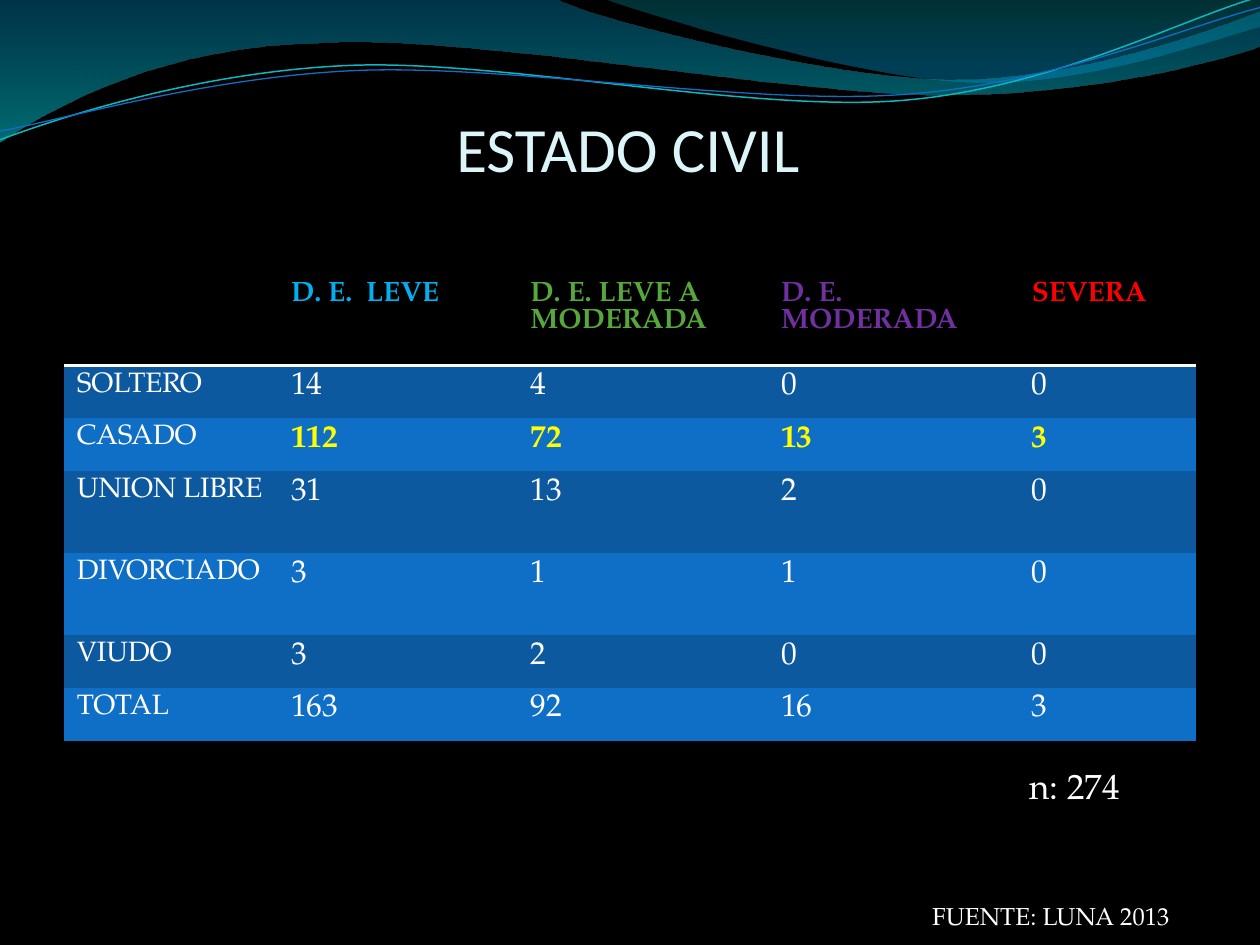
import pptx
import pptx.util
import pptx.dml.color
import pptx.enum.text
import pptx.oxml
import pptx.oxml.ns

WIDE, HIGH = 10, 7.5
UNIT = 1000
FACE = "TeX Gyre Pagella"
HUES = {
    "black": "000000", "white": "FFFFFF", "pale": "DBF5F9",
    "dark": "0C599F", "blue": "0F6FC6", "teal": "0AB8BF",
    "sky": "00B0F0", "green": "55A839", "plum": "7030A0",
    "red": "FF0000", "gold": "FFFF00",
    "sea": "0074A1", "aqua": "00C6CF", "lake": "00A1A9", "deep": "008BBF",
}
COLS = [1.7, 1.9, 1.99, 1.99, 1.4]
ROWS = [0.72, 0.42, 0.42, 0.65, 0.65, 0.42, 0.42]
HEADS = [("", "white"), ("D. E.  LEVE", "sky"), ("D. E. LEVE A MODERADA", "green"),
         ("D. E. MODERADA", "plum"), ("SEVERA", "red")]
DATA = [
    ("SOLTERO", 14, 4, 0, 0),
    ("CASADO", 112, 72, 13, 3),
    ("UNION LIBRE", 31, 13, 2, 0),
    ("DIVORCIADO", 3, 1, 1, 0),
    ("VIUDO", 3, 2, 0, 0),
    ("TOTAL", 163, 92, 16, 3),
]
BANDS = [
    ([(0, 0), (4.4, -0.01), (4.76, 0.17, 6.64, 0.63, 7.58, 0.63),
      (8.53, 0.63, 9.58, 0.26, 10, 0.09), (10.01, 0.36),
      (9.83, 0.44, 8.7, 0.76, 7.46, 0.75), (6.22, 0.75, 3.82, 0.28, 2.57, 0.34),
      (1.29, 0.36, 0.46, 0.83, -0.01, 1.13)],
     [(0, "sea", 45), (1, "aqua", 55)]),
    ([(4.79, -0.01), (5.09, 0.11, 6.82, 0.62, 7.69, 0.65),
      (8.56, 0.69, 9.61, 0.32, 10, 0.21), (10, 0)],
     [(0, "lake", 30), (0.8, "deep", 45)]),
]
WAVES = [
    ([(0, 1.11), (0.48, 0.93, 1.58, 0.57, 2.77, 0.52),
      (3.95, 0.47, 5.93, 0.89, 7.13, 0.8), (8.33, 0.71, 9.38, 0.15, 9.98, -0.02)],
     "teal", 0.85),
    ([(0, 1.04), (0.47, 0.96, 1.64, 0.61, 2.83, 0.56),
      (4.03, 0.51, 5.97, 0.84, 7.17, 0.75), (8.36, 0.67, 9.41, 0.21, 10, 0.06)],
     "blue", 0.75),
]


def inch(size):
    return pptx.util.Inches(size)


def tint(name):
    return pptx.dml.color.RGBColor.from_string(HUES[name])


def node(tag, **attrs):
    item = pptx.oxml.parse_xml(f"<{tag} {pptx.oxml.ns.nsdecls('a')}/>")
    for key, val in attrs.items():
        item.set(key, str(val))
    return item


def style(para, size, hue, face=FACE, bold=False):
    font = para.font
    font.size, font.name, font.bold = pptx.util.Pt(size), face, bold
    font.color.rgb = tint(hue)


def curve(slide, path, close):
    ends = [tuple(round(v * UNIT) for v in part[-2:]) for part in path]
    pen = slide.shapes.build_freeform(*ends[0], scale=inch(1) / UNIT)
    pen.add_line_segments(ends[1:], close=close)
    shape = pen.convert_to_shape()
    shape.shadow.inherit = False
    left, top = (min(axis) for axis in zip(*ends))
    legs = list(shape._element.iter(pptx.oxml.ns.qn("a:lnTo")))
    for leg, part in zip(legs, path[1:]):
        if len(part) == 6:
            bend = node("a:cubicBezTo")
            for x, y in zip(part[::2], part[1::2]):
                bend.append(node("a:pt", x=round(x * UNIT) - left,
                                 y=round(y * UNIT) - top))
            leg.getparent().replace(leg, bend)
    return shape


def add_band(slide, path, stops):
    shape = curve(slide, path, True)
    shape.line.fill.background()
    shape.fill.gradient()
    shape.fill.gradient_angle = 270
    for stop, (place, hue, alpha) in zip(shape.fill.gradient_stops, stops):
        stop.position = place
        stop.color.rgb = tint(hue)
    colors = shape._element.spPr.iter(pptx.oxml.ns.qn("a:srgbClr"))
    for color, (place, hue, alpha) in zip(colors, stops):
        color.append(node("a:alpha", val=alpha * 1000))


def add_wave(slide, path, hue, width):
    shape = curve(slide, path, False)
    shape.fill.background()
    shape.line.color.rgb = tint(hue)
    shape.line.width = pptx.util.Pt(width)


def set_title(slide, text):
    title = slide.shapes.title
    slide.shapes._spTree.append(title._element)
    title.left, title.top = inch(0.05 * WIDE), inch(0.77)
    title.width, title.height = inch(9.08), inch(0.7)
    frame = title.text_frame
    frame.text = text
    frame.margin_left = frame.margin_right = frame.margin_bottom = 0
    frame.vertical_anchor = pptx.enum.text.MSO_ANCHOR.BOTTOM
    para = frame.paragraphs[0]
    para.alignment = pptx.enum.text.PP_ALIGN.CENTER
    style(para, 36, "pale", "Calibri")


def set_cell(cell, text, fill, size, hue, bold):
    cell.fill.solid()
    cell.fill.fore_color.rgb = tint(fill)
    cell.text = str(text)
    style(cell.text_frame.paragraphs[0], size, hue, bold=bold)


def rule(cell):
    line = node("a:lnB", w=pptx.util.Pt(2))
    fill = node("a:solidFill")
    fill.append(node("a:srgbClr", val=HUES["white"]))
    line.append(fill)
    cell._tc.get_or_add_tcPr().insert(0, line)


def add_grid(slide):
    table = slide.shapes.add_table(len(ROWS), len(COLS), inch(0.51), inch(2.18),
                                   inch(sum(COLS)), inch(sum(ROWS))).table
    look = table._tbl.tblPr.find(pptx.oxml.ns.qn("a:tableStyleId"))
    look.text = "{2D5ABB26-0587-4C30-8999-92F81FD0307C}"
    for col, width in zip(table.columns, COLS):
        col.width = inch(width)
    for row, height in zip(table.rows, ROWS):
        row.height = inch(height)
    for c, (text, hue) in enumerate(HEADS):
        set_cell(table.cell(0, c), text, "black", 16, hue, True)
        rule(table.cell(0, c))
    for r, line in enumerate(DATA, 1):
        fill = "dark" if r % 2 else "blue"
        for c, text in enumerate(line):
            mark = line[0] == "CASADO" and c > 0
            set_cell(table.cell(r, c), text, fill, 18 if c else 16,
                     "gold" if mark else "white", mark)


def add_note(slide, text, left, top, width, height, size):
    box = slide.shapes.add_textbox(inch(left), inch(top), inch(width), inch(height))
    frame = box.text_frame
    frame.word_wrap = True
    frame.text = text
    style(frame.paragraphs[0], size, "white")


def main():
    deck = pptx.Presentation()
    deck.slide_width, deck.slide_height = inch(WIDE), inch(HIGH)
    slide = deck.slides.add_slide(deck.slide_layouts[5])
    slide.background.fill.solid()
    slide.background.fill.fore_color.rgb = tint("black")
    for band in BANDS:
        add_band(slide, *band)
    for wave in WAVES:
        add_wave(slide, *wave)
    set_title(slide, "ESTADO CIVIL ")
    add_grid(slide)
    add_note(slide, "n: 274", 8.07, 6.02, 1.26, 0.44, 20)
    add_note(slide, "FUENTE: LUNA 2013", 7.3, 7.1, 2.43, 0.34, 14)
    deck.save("out.pptx")


if __name__ == "__main__":
    main()
